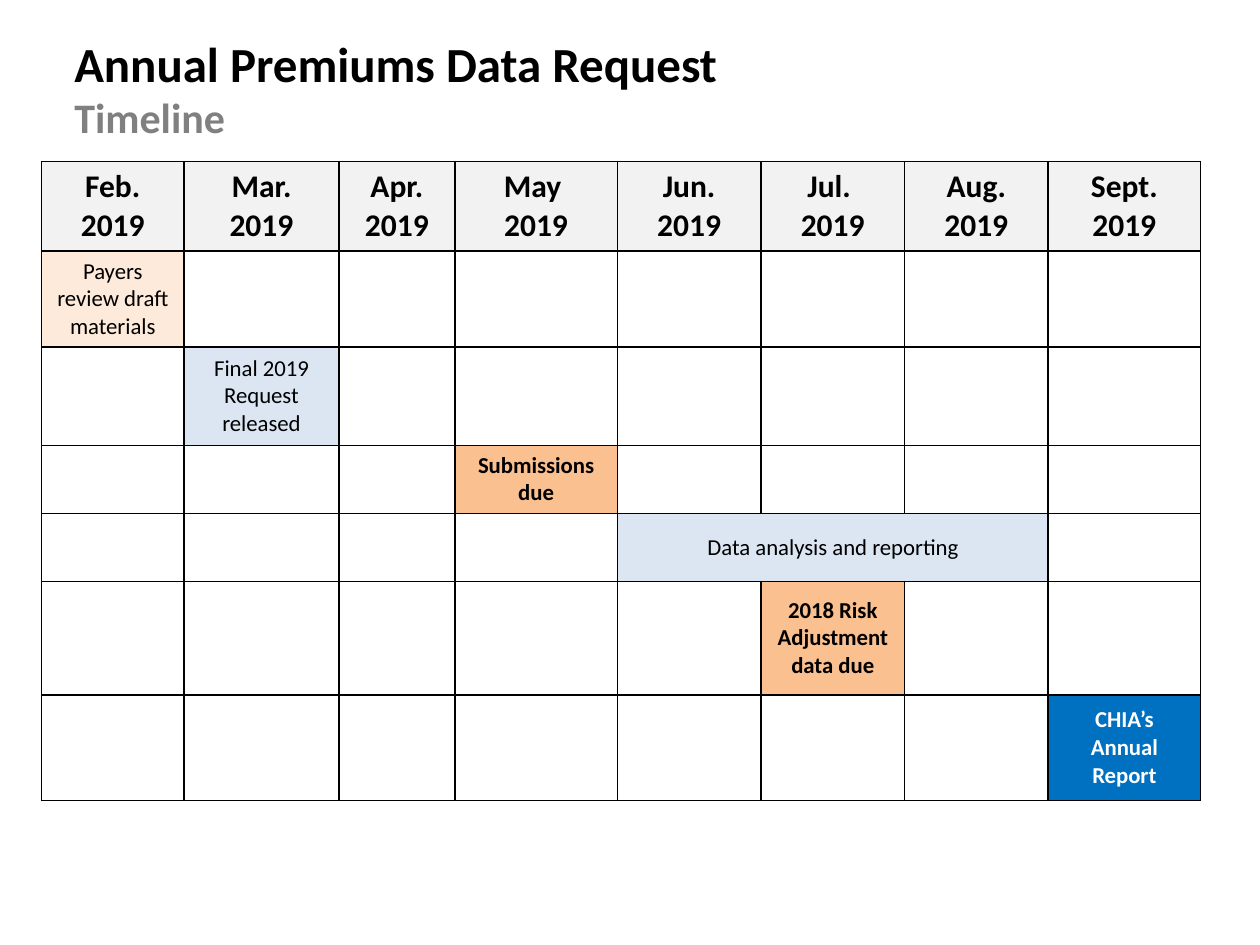
from dataclasses import dataclass

from lxml import etree
from pptx import Presentation
from pptx.dml.color import RGBColor
from pptx.enum.text import MSO_ANCHOR, MSO_AUTO_SIZE, PP_ALIGN
from pptx.oxml.ns import qn
from pptx.slide import Slide
from pptx.util import Inches, Pt

MIDDLE = MSO_ANCHOR.MIDDLE
FIXED_SIZE = MSO_AUTO_SIZE.NONE
LEFT, CENTER = PP_ALIGN.LEFT, PP_ALIGN.CENTER

BLACK = RGBColor(0, 0, 0)
WHITE = RGBColor(255, 255, 255)
GRAY = RGBColor(0x80, 0x80, 0x80)
HEADER_GRAY = RGBColor(0xF2, 0xF2, 0xF2)
PALE_ORANGE = RGBColor(0xFD, 0xEA, 0xDA)
ORANGE = RGBColor(0xFA, 0xC0, 0x90)
PALE_BLUE = RGBColor(0xDC, 0xE6, 0xF2)
BLUE = RGBColor(0, 0x70, 0xC0)

SLIDE_WIDTH, SLIDE_HEIGHT = Inches(10), Inches(7.5)
COLUMN_WIDTHS = [1.13, 1.23, 0.92, 1.29, 1.14, 1.14, 1.14, 1.21]
ROW_HEIGHTS = [0.55, 0.74, 0.78, 0.51, 0.54, 0.9, 0.84]
MONTHS = ["Feb. 2019", "Mar. 2019", "Apr. 2019", "May \n2019",
          "Jun. 2019", "Jul. \n2019", "Aug. 2019", "Sept. 2019"]
MILESTONES = [
    (0, 1, "Payers review draft materials", PALE_ORANGE, BLACK, False),
    (1, 1, "Final 2019 Request\nreleased", PALE_BLUE, BLACK, False),
    (3, 1, "Submissions due", ORANGE, BLACK, True),
    (4, 3, "Data analysis and reporting", PALE_BLUE, BLACK, False),
    (5, 1, "2018 Risk Adjustment data due", ORANGE, BLACK, True),
    (7, 1, "CHIA’s Annual Report", BLUE, WHITE, True),
]


@dataclass
class TimelineSlide:
    """Hold the style and the slide, and add each kind of element."""

    slide: Slide
    font_name: str = "Calibri"
    border_width: float = 1

    def fill_text(self, text_frame, text, alignment, size, color, bold):
        text_frame.text = text
        font_format = {"name": self.font_name, "size": Pt(size), "bold": bold}
        for paragraph in text_frame.paragraphs:
            paragraph.alignment = alignment
            for run in paragraph.runs:
                for attribute, value in font_format.items():
                    setattr(run.font, attribute, value)
                run.font.color.rgb = color

    def heading(self, index, text, top, size, color):
        shape = self.slide.placeholders[index]
        box = {"left": int(SLIDE_WIDTH * 0.049), "top": int(SLIDE_HEIGHT * top),
               "width": int(SLIDE_WIDTH * 0.893), "height": Inches(0.7)}
        for attribute, value in box.items():
            setattr(shape, attribute, value)
        frame = shape.text_frame
        frame_format = {"auto_size": FIXED_SIZE, "vertical_anchor": MIDDLE, "word_wrap": True}
        for attribute, value in frame_format.items():
            setattr(frame, attribute, value)
        self.fill_text(frame, text, LEFT, size, color, True)
        for paragraph in frame.paragraphs:
            paragraph.space_before = Pt(0)

    def border(self, cell):
        properties = cell._tc.get_or_add_tcPr()
        for side in ("a:lnL", "a:lnR", "a:lnT", "a:lnB"):
            line = etree.SubElement(properties, qn(side), w=str(Pt(self.border_width)))
            fill = etree.SubElement(line, qn("a:solidFill"))
            etree.SubElement(fill, qn("a:srgbClr"), val=str(BLACK))

    def grid(self, left, top):
        shape = self.slide.shapes.add_table(
            len(ROW_HEIGHTS), len(COLUMN_WIDTHS), int(SLIDE_WIDTH * left), int(SLIDE_HEIGHT * top),
            Inches(sum(COLUMN_WIDTHS)), Inches(sum(ROW_HEIGHTS)))
        table = shape.table
        table.first_row = table.horz_banding = False
        for column, width in zip(table.columns, COLUMN_WIDTHS):
            column.width = Inches(width)
        for row, height in zip(table.rows, ROW_HEIGHTS):
            row.height = Inches(height)
        for cell in table.iter_cells():
            self.border(cell)
            cell.fill.background()
        return table

    def entry(self, cell, text, fill, size, color, bold):
        cell.fill.solid()
        cell.fill.fore_color.rgb = fill
        cell.vertical_anchor = MIDDLE
        self.fill_text(cell.text_frame, text, CENTER, size, color, bold)


def main():
    presentation = Presentation()
    presentation.slide_width, presentation.slide_height = SLIDE_WIDTH, SLIDE_HEIGHT
    timeline = TimelineSlide(presentation.slides.add_slide(presentation.slide_layouts[0]))
    timeline.heading(0, "Annual Premiums Data Request", 0.02, 28, BLACK)
    timeline.heading(1, "Timeline", 0.077, 24, GRAY)
    table = timeline.grid(0.033, 0.171)
    for column, month in enumerate(MONTHS):
        timeline.entry(table.cell(0, column), month, HEADER_GRAY, 18, BLACK, True)
    for row, (column, span, text, fill, color, bold) in enumerate(MILESTONES, start=1):
        cell = table.cell(row, column)
        if span > 1:
            cell.merge(table.cell(row, column + span - 1))
        timeline.entry(cell, text, fill, 13, color, bold)
    presentation.save("out.pptx")


if __name__ == "__main__":
    main()
